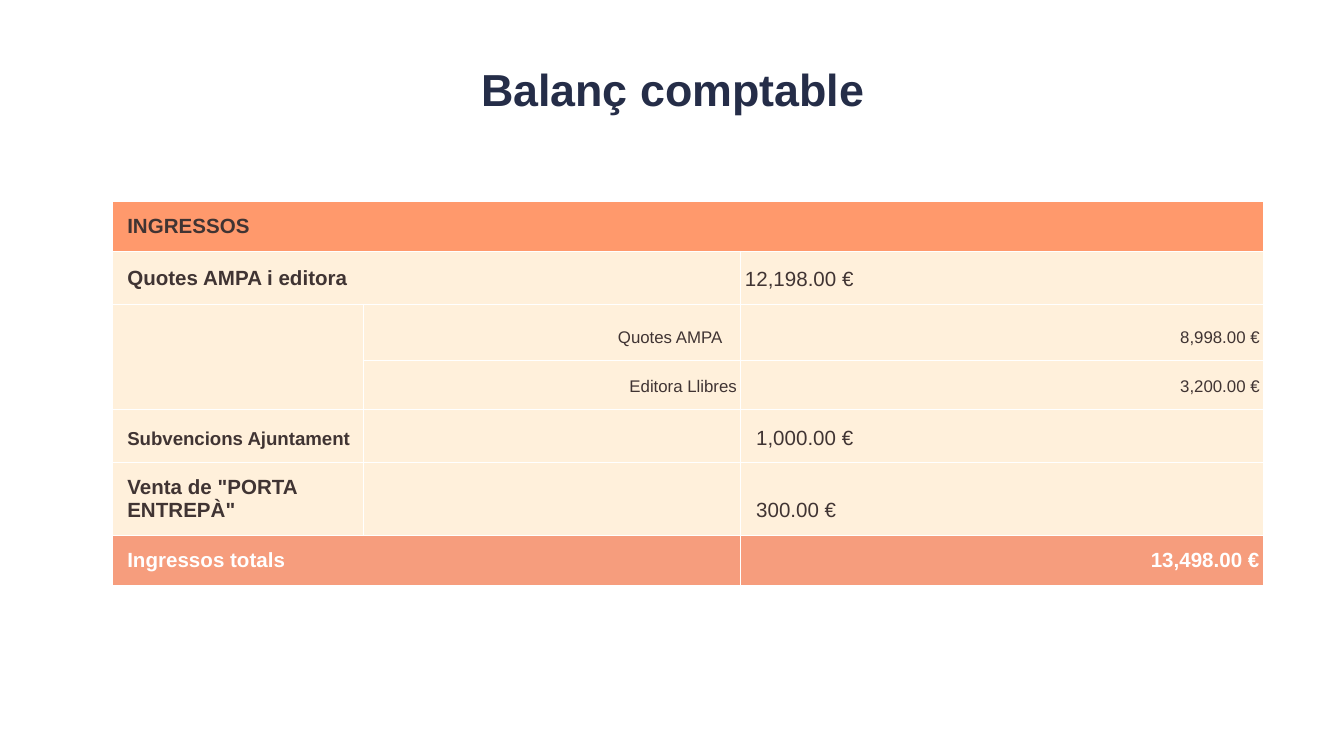
from lxml.etree import SubElement
from pptx import Presentation
from pptx.dml.color import RGBColor
from pptx.enum.text import MSO_ANCHOR, PP_ALIGN
from pptx.oxml.ns import qn
from pptx.util import Pt

INK, NAVY, WHITE = "403433", "252D48", "FFFFFF"
ORANGE, CREAM, SALMON = "FF996C", "FFF0DB", "F69D7D"
COLUMN_WIDTHS = [134.6, 202.3, 280.1]
ROW_HEIGHTS = [26.25, 28.6, 30, 26.25, 28.4, 38.8, 26.25]
ROW_FILLS = [ORANGE] + [CREAM] * 5 + [SALMON]
MERGES = [((0, 0), (0, 2)), ((1, 0), (1, 1)), ((2, 0), (3, 0)), ((6, 0), (6, 1))]

HEADING = {"size": 11, "bold": True, "indent": 6}
AMOUNT = {"size": 11, "spacing": 1.15, "indent": 6}
DETAIL = {"size": 9, "spacing": 1.15, "indent": 6, "align": PP_ALIGN.RIGHT}
TOTAL = {**HEADING, "color": WHITE}
MIDDLE = {**HEADING, "anchor": MSO_ANCHOR.MIDDLE}

CONTENT = {
    (0, 0): ("INGRESSOS", MIDDLE),
    (1, 0): ("Quotes AMPA i editora", MIDDLE),
    (1, 2): ("12,198.00 €", {**AMOUNT, "indent": 0}),
    (2, 1): ("Quotes AMPA", {**DETAIL, "margin_right": 10}),
    (2, 2): ("8,998.00 €", {**DETAIL, "indent": 0}),
    (3, 1): ("Editora Llibres", DETAIL),
    (3, 2): ("3,200.00 €", DETAIL),
    (4, 0): ("Subvencions Ajuntament", {**HEADING, "size": 10}),
    (4, 2): ("1,000.00 €", AMOUNT),
    (5, 0): ("Venta de \"PORTA ENTREPÀ\"", HEADING),
    (5, 2): ("300.00 €", AMOUNT),
    (6, 0): ("Ingressos totals", TOTAL),
    (6, 2): ("13,498.00 €", {**TOTAL, "align": PP_ALIGN.RIGHT}),
}


def rgb(value):
    """Return the colour for a hex string."""
    return RGBColor.from_string(value)


def set_attributes(target, values):
    """Set each named attribute on the target."""
    for name, value in values.items():
        setattr(target, name, value)


def format_font(font, size, color, bold):
    """Apply the slide typeface with a size, colour and weight."""
    set_attributes(font, {"name": "Arial", "size": Pt(size), "bold": bold})
    font.color.rgb = rgb(color)


def add_title(slide, text):
    """Place and format the title placeholder."""
    title = slide.shapes.title
    set_attributes(title, {"left": Pt(14.4), "top": Pt(24.5),
                           "width": Pt(692), "height": Pt(45.4)})
    frame = title.text_frame
    set_attributes(frame, {"text": text, "word_wrap": True,
                           "vertical_anchor": MSO_ANCHOR.MIDDLE,
                           "margin_left": Pt(7.2), "margin_right": Pt(7.2),
                           "margin_top": Pt(7.2), "margin_bottom": Pt(7.2)})
    paragraph = frame.paragraphs[0]
    paragraph.alignment = PP_ALIGN.CENTER
    format_font(paragraph.runs[0].font, 24, NAVY, True)


def add_borders(cell):
    """Draw thin white lines on all four sides of a cell."""
    properties = cell._tc.get_or_add_tcPr()
    for side in ("a:lnL", "a:lnR", "a:lnT", "a:lnB"):
        line = SubElement(properties, qn(side), w=str(Pt(0.75)))
        fill = SubElement(line, qn("a:solidFill"))
        SubElement(fill, qn("a:srgbClr"), val=WHITE)


def format_cell(cell, fill):
    """Give a cell its fill, borders and margins."""
    add_borders(cell)
    cell.fill.solid()
    cell.fill.fore_color.rgb = rgb(fill)
    set_attributes(cell, {"margin_left": Pt(2.2), "margin_right": Pt(2.2),
                          "margin_top": 0, "margin_bottom": 0})


def write_cell(cell, text, style):
    """Write one formatted paragraph into a cell."""
    set_attributes(cell, {"text": text, "margin_top": Pt(7.2), "margin_bottom": Pt(7.2),
                          "margin_right": Pt(style.get("margin_right", 2.2)),
                          "vertical_anchor": style.get("anchor", MSO_ANCHOR.BOTTOM)})
    paragraph = cell.text_frame.paragraphs[0]
    set_attributes(paragraph, {"alignment": style.get("align", PP_ALIGN.LEFT),
                               "line_spacing": style.get("spacing", 1.0)})
    paragraph._p.get_or_add_pPr().set("marL", str(Pt(style["indent"])))
    format_font(paragraph.runs[0].font, style["size"],
                style.get("color", INK), style.get("bold", False))


def add_income_table(slide):
    """Add the income table with its merged cells."""
    table = slide.shapes.add_table(len(ROW_HEIGHTS), len(COLUMN_WIDTHS), Pt(60), Pt(108),
                                   Pt(sum(COLUMN_WIDTHS)), Pt(sum(ROW_HEIGHTS))).table
    set_attributes(table, {"first_row": False, "horz_banding": False})
    for column, width in zip(table.columns, COLUMN_WIDTHS):
        column.width = Pt(width)
    for row, height, fill in zip(table.rows, ROW_HEIGHTS, ROW_FILLS):
        row.height = Pt(height)
        for cell in row.cells:
            format_cell(cell, fill)
    for first, last in MERGES:
        table.cell(*first).merge(table.cell(*last))
    for position, (text, style) in CONTENT.items():
        write_cell(table.cell(*position), text, style)


def main():
    """Build and save the presentation."""
    presentation = Presentation()
    set_attributes(presentation, {"slide_width": Pt(720), "slide_height": Pt(405)})
    slide = presentation.slides.add_slide(presentation.slide_layouts[5])
    add_title(slide, "Balanç comptable")
    add_income_table(slide)
    presentation.save("out.pptx")


if __name__ == "__main__":
    main()
